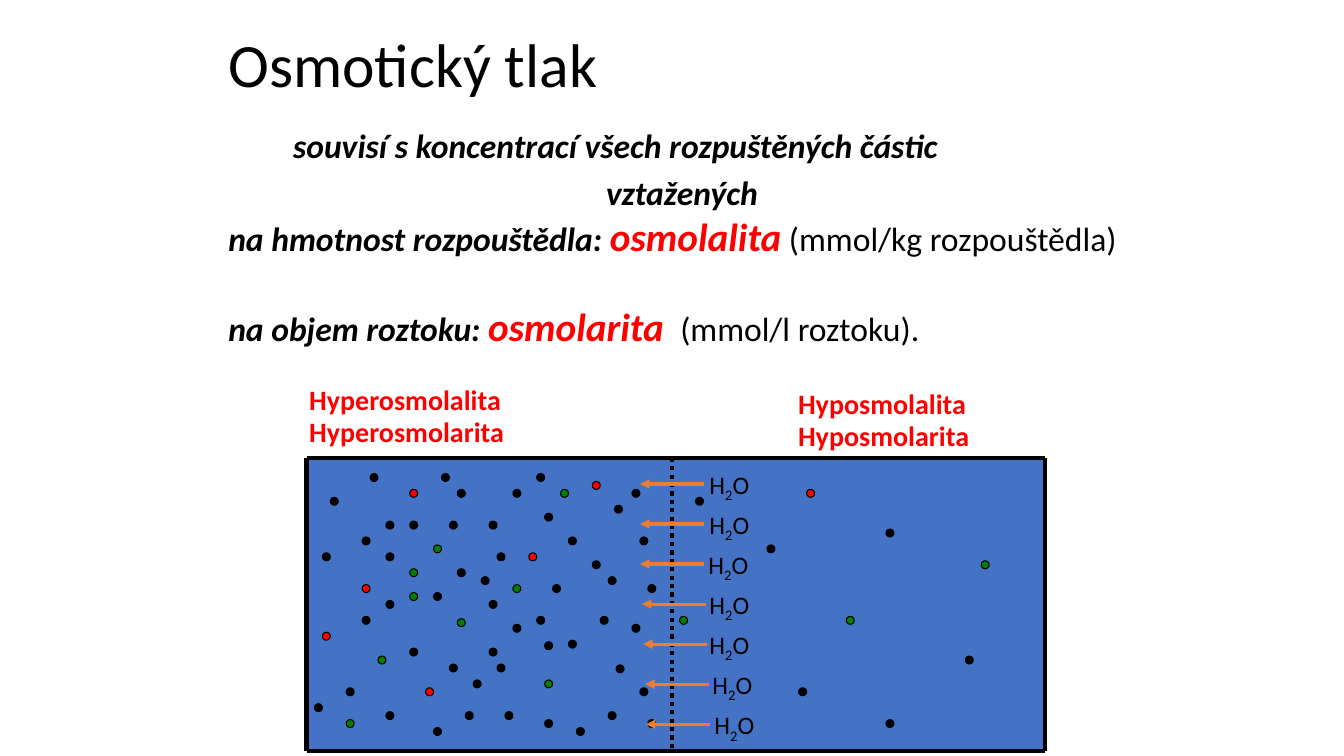
"""Build a slide on osmotic pressure with a diagram of water crossing a membrane."""
from dataclasses import dataclass

from lxml.etree import SubElement
from pptx import Presentation
from pptx.dml.color import RGBColor
from pptx.enum.dml import MSO_LINE
from pptx.enum.shapes import MSO_CONNECTOR, MSO_SHAPE
from pptx.enum.text import MSO_ANCHOR, MSO_AUTO_SIZE, PP_ALIGN
from pptx.oxml.ns import qn
from pptx.shapes.connector import Connector
from pptx.slide import Slide
from pptx.util import Pt

BLACK = RGBColor(0x00, 0x00, 0x00)
RED = RGBColor(0xFF, 0x00, 0x00)
GREEN = RGBColor(0x00, 0x80, 0x00)
BLUE = RGBColor(0x44, 0x72, 0xC4)
ORANGE = RGBColor(0xED, 0x7D, 0x31)
FONT = "Calibri"

TANK_LEFT, MEMBRANE, TANK_RIGHT = 219, 480, 746.6
TANK_TOP, TANK_BOTTOM = 327, 536.5
GRID_LEFT, GRID_TOP, GRID_STEP, DOT_SIZE = 224.6, 338.2, 5.67, 5.7
FLOW_TOP, FLOW_STEP, ARROW_LENGTH = 345.7, 28.6, 45.4

PARTICLES = {
    BLACK: [
        (9, 16), (9, 10), (6, 8), (9, 6), (12, 6), (18, 12), (21, 13), (22, 16),
        (25, 19), (28, 18), (30, 14), (32, 8), (28, 0), (25, 2), (22, 6), (23, 10),
        (35, 11), (42, 14), (40, 19), (36, 18), (32, 21), (29, 31), (33, 32), (37, 30),
        (41, 27), (38, 24.1), (29, 21.2), (6, 18), (12, 22), (23, 24), (20, 26), (17, 24),
        (9, 30), (0, 29), (4, 27), (16, 0), (18, 2), (17, 6), (7, 0), (2, 3),
        (1, 10), (19, 30), (42, 31), (41, 8), (40, 2), (37.8, 4), (37, 13), (15, 15),
        (22, 22), (24, 30), (15, 32), (29, 5),
        (61, 27), (57, 9), (72, 31), (72, 7), (48, 3), (82, 23),
    ],
    RED: [(6, 14), (27, 10), (1, 20), (14, 27), (12, 2), (35, 1), (62, 2)],
    GREEN: [
        (12, 15), (12, 12), (15, 9), (31, 2), (25, 14), (29, 26), (18, 18.3),
        (4, 31), (8, 23), (46, 18), (67, 18), (84, 11),
    ],
}


@dataclass(frozen=True)
class Span:
    text: str
    size: float
    color: RGBColor = BLACK
    bold: bool = False
    italic: bool = False
    subscript: bool = False


@dataclass(frozen=True)
class Line:
    spans: tuple[Span, ...]
    align: PP_ALIGN = PP_ALIGN.LEFT
    indent: float = 0


@dataclass(frozen=True)
class TextBlock:
    left: float
    top: float
    width: float
    height: float
    lines: tuple[Line, ...]
    wrap: bool = False


@dataclass(frozen=True)
class Flow:
    label_left: float
    arrow_tip: float


def strong(text: str) -> Span:
    return Span(text, 24, bold=True, italic=True)


def term(text: str) -> Span:
    return Span(text, 28, RED, bold=True, italic=True)


def heading(left: float, top: float, text: str) -> TextBlock:
    return TextBlock(left, top, 171, 31, (Line((Span(text, 20, RED, bold=True),)),))


WATER = Line((Span("H", 18), Span("2", 18, subscript=True), Span("O", 18)))
FLOWS = (
    Flow(499.7, 457.2), Flow(499.7, 457.2), Flow(499, 457.2), Flow(499.7, 458.6),
    Flow(499.7, 459.4), Flow(501.8, 460.8), Flow(503.3, 461.5),
)
TEXTS = (
    TextBlock(202.3, 85.7, 571, 36,
              (Line((strong("souvisí s koncentrací všech rozpuštěných částic"),)),)),
    TextBlock(120, 119.5, 734.4, 99.4, (
        Line((strong("vztažených"),), PP_ALIGN.CENTER),
        Line((strong("na hmotnost rozpouštědla: "), term("osmolalita"), strong(" "),
              Span("(mmol/kg rozpouštědla)", 24)), indent=36),
    ), wrap=True),
    TextBlock(120, 212.4, 734.4, 41, (
        Line((strong("na objem roztoku: "), term("osmolarita "),
              Span(" (mmol/l roztoku).", 24)), indent=36),
    ), wrap=True),
    heading(213.8, 270, "Hyperosmolalita"),
    heading(213.8, 292.6, "Hyperosmolarita"),
    heading(563, 272.9, "Hyposmolalita"),
    heading(563, 295.5, "Hyposmolarita"),
)


def write_line(para, line: Line) -> None:
    para.alignment = line.align
    if line.indent:
        properties = para._p.get_or_add_pPr()
        properties.set("marL", str(Pt(line.indent)))
        properties.set("indent", "0")
    for item in line.spans:
        span = para.add_run()
        span.text = item.text
        span.font.name = FONT
        span.font.size = Pt(item.size)
        span.font.bold = item.bold
        span.font.italic = item.italic
        span.font.color.rgb = item.color
        if item.subscript:
            span._r.get_or_add_rPr().set("baseline", "-25000")


def add_text(page: Slide, block: TextBlock) -> None:
    box = page.shapes.add_textbox(Pt(block.left), Pt(block.top), Pt(block.width), Pt(block.height))
    frame = box.text_frame
    frame.word_wrap = block.wrap
    frame.auto_size = MSO_AUTO_SIZE.SHAPE_TO_FIT_TEXT
    for index, line in enumerate(block.lines):
        write_line(frame.add_paragraph() if index else frame.paragraphs[0], line)


def add_title(page: Slide, text: str) -> None:
    title = page.shapes.title
    title.left, title.top, title.width, title.height = Pt(156), Pt(3.6), Pt(648), Pt(90)
    frame = title.text_frame
    frame.auto_size = MSO_AUTO_SIZE.NONE
    frame.vertical_anchor = MSO_ANCHOR.MIDDLE
    frame.paragraphs[0].line_spacing = 0.9
    write_line(frame.paragraphs[0], Line((Span(text, 44),)))


def add_solid(page: Slide, kind: MSO_SHAPE, left: float, top: float, width: float,
              height: float, color: RGBColor, outlined: bool = False) -> None:
    shape = page.shapes.add_shape(kind, Pt(left), Pt(top), Pt(width), Pt(height))
    shape.shadow.inherit = False
    shape.fill.solid()
    shape.fill.fore_color.rgb = color
    if outlined:
        shape.line.color.rgb = BLACK
        shape.line.width = Pt(0.75)
    else:
        shape.line.fill.background()


def add_stroke(page: Slide, start: tuple[float, float], end: tuple[float, float],
               color: RGBColor, width: float) -> Connector:
    stroke = page.shapes.add_connector(MSO_CONNECTOR.STRAIGHT, *map(Pt, start + end))
    stroke.line.color.rgb = color
    stroke.line.width = Pt(width)
    SubElement(stroke._element.spPr, qn("a:effectLst"))
    return stroke


def add_tank(page: Slide) -> None:
    for left, right in ((TANK_LEFT, MEMBRANE), (MEMBRANE, TANK_RIGHT)):
        add_solid(page, MSO_SHAPE.RECTANGLE, left, TANK_TOP, right - left,
                  TANK_BOTTOM - TANK_TOP, BLUE)
    for x in (TANK_LEFT, TANK_RIGHT):
        add_stroke(page, (x, TANK_TOP), (x, TANK_BOTTOM), BLACK, 3)
    for y in (TANK_TOP, TANK_BOTTOM):
        add_stroke(page, (TANK_LEFT, y), (TANK_RIGHT, y), BLACK, 3)
    membrane = add_stroke(page, (MEMBRANE, TANK_TOP), (MEMBRANE, TANK_BOTTOM), BLACK, 3)
    membrane.line.dash_style = MSO_LINE.ROUND_DOT


def add_flow(page: Slide, flow: Flow, y: float) -> None:
    add_text(page, TextBlock(flow.label_left, y - 14, 48.2, 28.8, (WATER,)))
    arrow = add_stroke(page, (flow.arrow_tip + ARROW_LENGTH, y), (flow.arrow_tip, y), ORANGE, 2.25)
    SubElement(arrow.line._get_or_add_ln(), qn("a:tailEnd"), type="triangle")


def main() -> None:
    deck = Presentation()
    deck.slide_width, deck.slide_height = Pt(960), Pt(540)
    page = deck.slides.add_slide(deck.slide_layouts[5])
    add_title(page, "Osmotický tlak")
    add_tank(page)
    for color, cells in PARTICLES.items():
        for column, row in cells:
            add_solid(page, MSO_SHAPE.OVAL, GRID_LEFT + column * GRID_STEP,
                      GRID_TOP + row * GRID_STEP, DOT_SIZE, DOT_SIZE, color, outlined=True)
    for index, flow in enumerate(FLOWS):
        add_flow(page, flow, FLOW_TOP + index * FLOW_STEP)
    for block in TEXTS:
        add_text(page, block)
    deck.save("out.pptx")


if __name__ == "__main__":
    main()
